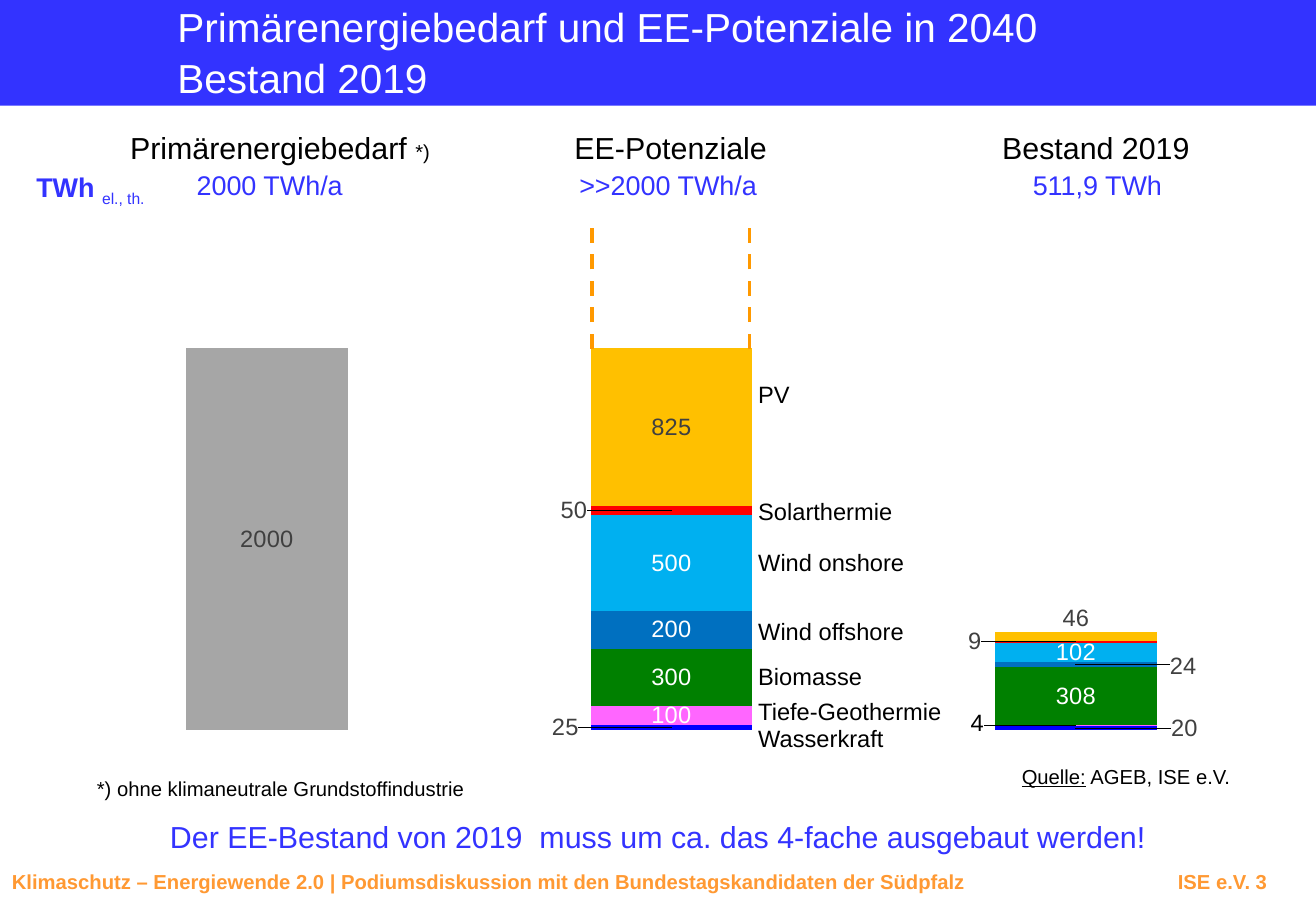
from lxml import etree
from pptx import Presentation
from pptx.chart.data import CategoryChartData
from pptx.dml.color import RGBColor
from pptx.enum.chart import XL_CHART_TYPE as ChartType
from pptx.enum.dml import MSO_LINE as LineStyle
from pptx.enum.shapes import MSO_CONNECTOR as Connector, MSO_SHAPE as Shape
from pptx.enum.text import MSO_ANCHOR as Anchor, MSO_AUTO_SIZE as AutoSize, PP_ALIGN as Align
from pptx.oxml import parse_xml
from pptx.oxml.ns import nsdecls, qn
from pptx.util import Cm, Pt

BLUE, ORANGE, BLACK, WHITE, GREY = "3333FF", "FF9900", "000000", "FFFFFF", "404040"
WIDTH, HEIGHT = 27.51, 19.05


def rgb(value):
    return RGBColor.from_string(value)


def format_font(font, size, color, bold=False):
    font.name, font.size, font.bold = "Arial", Pt(size), bold
    font.color.rgb = rgb(color)


def add_text(paragraph, text, size=14, color=BLACK, bold=False, underline=False, baseline=None):
    run = paragraph.add_run()
    run.text = text
    format_font(run.font, size, color, bold)
    run.font.underline = underline
    if baseline is not None:
        run.font._element.set("baseline", str(baseline))


def manual_layout(**values):
    items = "".join(f'<c:{name} val="{value}"/>' for name, value in values.items())
    return parse_xml(f'<c:layout {nsdecls("c")}><c:manualLayout>{items}</c:manualLayout></c:layout>')


class SlideBuilder:
    def __init__(self, presentation):
        self.slide = presentation.slides.add_slide(presentation.slide_layouts[5])
        self.shapes = self.slide.shapes

    def frame(self, shape, inset=None, wrap=False, align=Align.LEFT):
        frame = shape.text_frame
        frame.word_wrap, frame.auto_size = wrap, AutoSize.SHAPE_TO_FIT_TEXT
        frame.vertical_anchor = Anchor.TOP
        if inset is not None:
            frame.margin_left = frame.margin_right = Cm(inset)
            frame.margin_top = frame.margin_bottom = Cm(inset)
        paragraph = frame.paragraphs[0]
        paragraph.alignment = align
        return paragraph

    def title(self, lines, box):
        title = self.shapes.title
        title.left, title.top, title.width, title.height = map(Cm, box)
        paragraph = self.frame(title, inset=0, wrap=True)
        title.text_frame.auto_size = AutoSize.NONE
        paragraph.line_spacing = 1.05
        for index, line in enumerate(lines):
            if index:
                paragraph.add_line_break()
            add_text(paragraph, line, size=24, color=WHITE)

    def text(self, text, box, inset=None, wrap=False, align=Align.LEFT, **style):
        shape = self.shapes.add_textbox(*map(Cm, box))
        paragraph = self.frame(shape, inset, wrap, align)
        add_text(paragraph, text, **style)
        return paragraph

    def rectangle(self, box, fill):
        shape = self.shapes.add_shape(Shape.RECTANGLE, *map(Cm, box))
        shape.shadow.inherit = False
        shape.fill.solid()
        shape.fill.fore_color.rgb = rgb(fill)
        shape.line.fill.background()
        return shape

    def dashed_line(self, x, start, end):
        line = self.shapes.add_connector(Connector.STRAIGHT, Cm(x), Cm(start), Cm(x), Cm(end))
        line.line.color.rgb = rgb(ORANGE)
        line.line.width, line.line.dash_style = Pt(2.25), LineStyle.DASH
        etree.SubElement(line._element.spPr, qn("a:effectLst"))

    def stacked_chart(self, box, categories, series_rows, maximum):
        data = CategoryChartData(number_format="0")
        data.categories = categories
        for index, row in enumerate(series_rows, 1):
            data.add_series(f"Series {index}", row[0])
        chart = self.shapes.add_chart(ChartType.COLUMN_STACKED, *map(Cm, box), data).chart
        chart.has_legend = chart.has_title = False
        format_font(chart.font, 10, BLACK)
        axis = chart.value_axis
        axis.minimum_scale, axis.maximum_scale = 0, maximum
        axis.has_major_gridlines = axis.visible = chart.category_axis.visible = False
        area = chart._chartSpace.chart.plotArea
        for old in area.findall(qn("c:layout")):
            area.remove(old)
        area.insert(0, manual_layout(layoutTarget="inner", xMode="edge", yMode="edge",
                                     x=0.016, y=0.049, w=0.984, h=0.916))
        plot = chart.plots[0]
        plot.gap_width, plot.overlap, plot.vary_by_categories = 150, 100, False
        for series, (_, fills, label_color, moved) in zip(plot.series, series_rows):
            self.format_series(series, fills, label_color, moved)

    def format_series(self, series, fills, label_color, moved):
        series.format.fill.solid()
        series.format.fill.fore_color.rgb = rgb(fills[0])
        for index, fill in enumerate(fills[1:], 1):
            point = series.points[index].format.fill
            point.solid()
            point.fore_color.rgb = rgb(fill)
        labels = series.data_labels
        labels.show_value = True
        labels.number_format, labels.number_format_is_linked = "0", False
        format_font(labels.font, 14, label_color)
        for index, (x, y, color) in moved.items():
            format_font(series.points[index].data_label.font, 14, color)
            if x or y:
                label = labels._element.xpath(f'c:dLbl[c:idx/@val="{index}"]')[0]
                label.insert(1, manual_layout(x=x, y=y))


def main():
    presentation = Presentation()
    presentation.slide_width, presentation.slide_height = Cm(WIDTH), Cm(HEIGHT)
    builder = SlideBuilder(presentation)

    # Title bar, behind the title
    bar = builder.rectangle((0, 0, WIDTH, 2.21), BLUE)
    builder.shapes._spTree.insert(2, bar._element)
    builder.title(["Primärenergiebedarf und EE-Potenziale in 2040", "Bestand 2019"],
                  (3.71, 0, 23.22, 2.06))

    # Footer
    footer = builder.text("Klimaschutz – Energiewende 2.0 | Podiumsdiskussion mit den "
                          "Bundestagskandidaten der Südpfalz\tISE e.V. 3",
                          (0, 18.06, WIDTH, 0.76), wrap=True, size=12, color="FF9933", bold=True)
    tabs = etree.SubElement(footer._p.get_or_add_pPr(), qn("a:tabLst"))
    etree.SubElement(tabs, qn("a:tab"), pos=str(Cm(26.24)), algn="r")

    # Chart: values, fills, label colour, {point: (label shift x, y, colour)}
    builder.stacked_chart((0.94, 4.75, 25.78, 10.9), ["1", "2", "3"], [
        ((2000, 25, 20), ("A6A6A6", "0000FF", "0000FF"), GREY,
         {1: (-0.086, 0, GREY), 2: (0.088, 0, GREY)}),
        ((None, 100, 4), ("FF66FF",), WHITE, {2: (-0.08, -0.005, BLACK)}),
        ((None, 300, 308), ("008000",), WHITE, {}),
        ((None, 200, 24), ("0070C0",), GREY, {1: (0, 0, WHITE), 2: (0.087, 0.004, GREY)}),
        ((None, 500, 102), ("00B0F0",), WHITE, {}),
        ((None, 50, 9), ("FF0000",), GREY, {1: (-0.079, 0, GREY), 2: (-0.082, 0, GREY)}),
        ((None, 825, 46), ("FFC000",), GREY, {2: (0, -0.035, GREY)}),
    ], maximum=2500)

    # Column headings and totals
    heading = builder.text("Primärenergiebedarf ", (2.36, 2.57, 6.99, 1.02),
                           align=Align.CENTER, size=18)
    add_text(heading, "*)", size=12)
    for text, left, width in [("EE-Potenziale", 11.76, 4.57), ("Bestand 2019", 20.7, 4.47)]:
        builder.text(text, (left, 2.57, width, 1.02), size=18)
    for text, left, width in [("2000 TWh/a", 3.86, 3.61), (">>2000 TWh/a", 11.86, 4.27),
                              ("511,9 TWh", 21.34, 3.25)]:
        builder.text(text, (left, 3.4, width, 0.94), size=16, color=BLUE)
    unit = builder.text("TWh ", (0.51, 3.45, 2.95, 0.94), size=16, color=BLUE, bold=True)
    add_text(unit, "el., th.", size=16, color=BLUE, baseline=-25000)

    # Energy sources beside the middle column
    for text, top, width in [("PV", 7.82, 1.17), ("Solarthermie", 10.26, 3.33),
                             ("Wind onshore", 11.33, 3.58), ("Wind offshore", 12.78, 3.58),
                             ("Biomasse", 13.72, 2.69), ("Tiefe-Geothermie", 14.45, 4.37),
                             ("Wasserkraft", 15.01, 3.15)]:
        builder.text(text, (15.6, top, width, 0.86))

    # Open upper end of the potential
    for x in (12.37, 15.67):
        builder.dashed_line(x, 7.29, 4.6)

    # Source, footnote and conclusion
    source = builder.frame(builder.rectangle((21.36, 15.98, 4.42, 0.51), WHITE), inset=0)
    add_text(source, "Quelle:", size=12, underline=True)
    add_text(source, " AGEB, ISE e.V.", size=12)
    builder.text("*) ohne klimaneutrale Grundstoffindustrie", (1.68, 16.1, 8.38, 0.76),
                 align=Align.CENTER, size=12)
    builder.text("Der EE-Bestand von 2019  muss um ca. das 4-fache ausgebaut werden!",
                 (0, 16.92, WIDTH, 1.12), inset=0.18, wrap=True, align=Align.CENTER,
                 size=18, color=BLUE)

    presentation.save("out.pptx")


if __name__ == "__main__":
    main()
